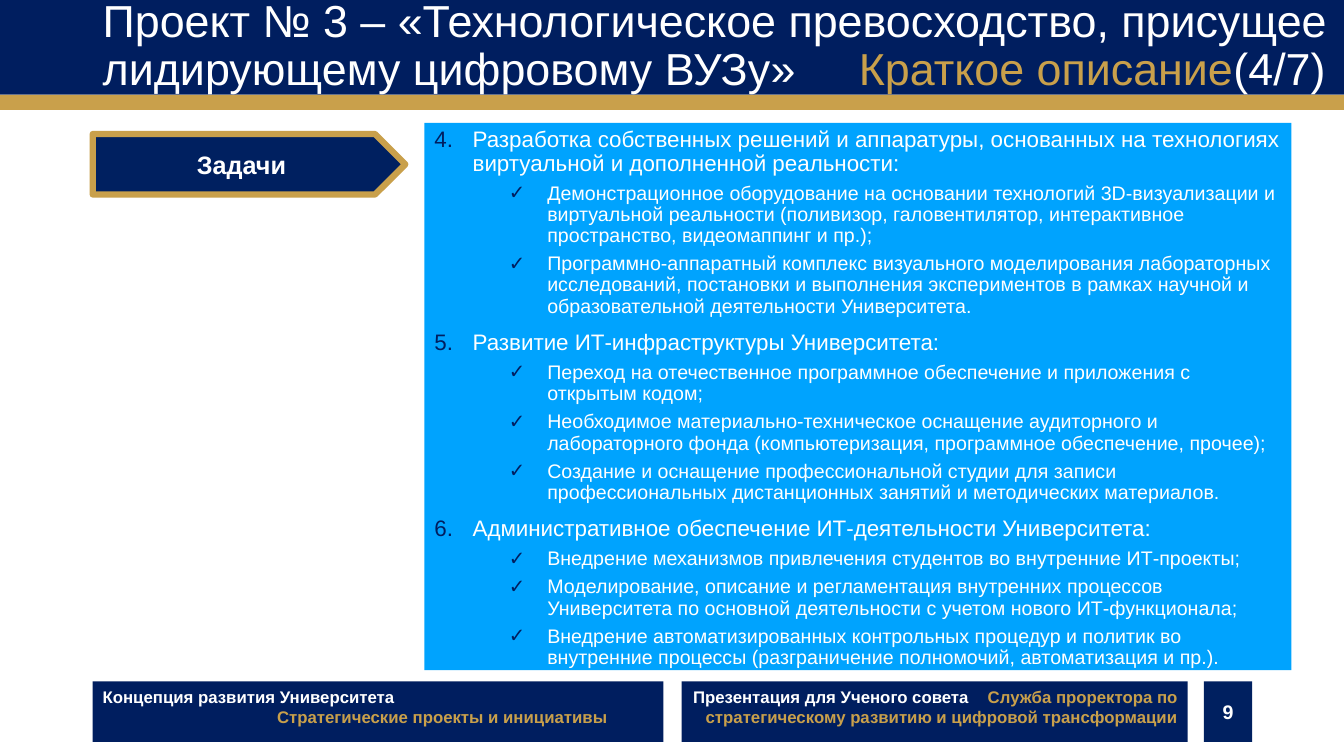
from lxml.etree import SubElement
from pptx import Presentation
from pptx.dml.color import RGBColor
from pptx.enum.shapes import MSO_SHAPE as Shape
from pptx.enum.text import MSO_ANCHOR as Anchor, PP_ALIGN as Align
from pptx.oxml.ns import qn
from pptx.util import Inches, Pt

COLORS = {"navy": "001E5F", "label": "002060", "gold": "C9A04B",
          "sky": "00A3FE", "white": "FFFFFF"}
FONT = "Arial"
WIDTH, HEIGHT = 13.33, 7.5

TITLE = [
    ("Проект № 3 – «Технологическое превосходство, присущее "
     "лидирующему цифровому ВУЗу»\t", "white"),
    ("Краткое описание", "gold"),
    ("(4/7)", "white"),
]
LABEL = "Задачи"
PAGE_NUMBER = "9"
CONCEPT = [("Концепция развития Университета", "white", 0),
           ("Стратегические проекты и инициативы", "gold", 1.73)]
AUDIENCE = "Презентация для Ученого совета"
DEPARTMENT = ("Служба проректора по стратегическому развитию "
              "и цифровой трансформации")
FIRST_TASK = 4
TASKS = [
    ("Разработка собственных решений и аппаратуры, основанных на технологиях "
     "виртуальной и дополненной реальности:", [
         "Демонстрационное оборудование на основании технологий "
         "3D-визуализации и виртуальной реальности (поливизор, "
         "галовентилятор, интерактивное пространство, видеомаппинг и пр.);",
         "Программно-аппаратный комплекс визуального моделирования "
         "лабораторных исследований, постановки и выполнения экспериментов "
         "в рамках научной и образовательной деятельности Университета.",
     ]),
    ("Развитие ИТ-инфраструктуры Университета:", [
        "Переход на отечественное программное обеспечение и приложения "
        "с открытым кодом;",
        "Необходимое материально-техническое оснащение аудиторного и "
        "лабораторного фонда (компьютеризация, программное обеспечение, "
        "прочее);",
        "Создание и оснащение профессиональной студии для записи "
        "профессиональных дистанционных занятий и методических материалов.",
    ]),
    ("Административное обеспечение ИТ-деятельности Университета:", [
        "Внедрение механизмов привлечения студентов во внутренние "
        "ИТ-проекты;",
        "Моделирование, описание и регламентация внутренних процессов "
        "Университета по основной деятельности с учетом нового "
        "ИТ-функционала;",
        "Внедрение автоматизированных контрольных процедур и политик во "
        "внутренние процессы (разграничение полномочий, автоматизация и пр.).",
    ]),
]

# Layout: one left margin, a header with a gold strip, a footer row
MARGIN = 0.92
HEADER, STRIP = 0.94, 0.15
FOOTER_TOP, FOOTER_HEIGHT = 6.76, 0.6
PANEL = (4.21, 1.22, 8.6, 5.43)
HANGING = 0.38


def rgb(name):
    return RGBColor.from_string(COLORS[name])


def add_block(page, place, fill, kind=Shape.RECTANGLE, anchor=Anchor.TOP):
    block = page.shapes.add_shape(kind, *map(Inches, place))
    block.shadow.inherit = False
    block.fill.solid()
    block.fill.fore_color.rgb = rgb(fill)
    block.line.fill.background()
    block.text_frame.word_wrap = True
    block.text_frame.vertical_anchor = anchor
    block.text_frame.paragraphs[0].alignment = Align.LEFT
    return block


def add_span(para, text, size, color="white", bold=False):
    span = para.add_run()
    span.text = text
    span.font.name, span.font.size, span.font.bold = FONT, Pt(size), bold
    span.font.color.rgb = rgb(color)
    return span


def next_para(frame):
    """Return the empty first paragraph, or a new one after the last."""
    first = frame.paragraphs[0]
    para = frame.add_paragraph() if first.runs else first
    para.alignment = Align.LEFT
    return para


def set_indent(para, left, first=0):
    props = para._p.get_or_add_pPr()
    props.set("marL", str(Inches(left)))
    props.set("indent", str(Inches(first)))
    return props


def add_item(frame, text, level, size, before, left, bullet, **attributes):
    para = next_para(frame)
    para.level = level
    para.line_spacing = 0.9
    para.space_before = Pt(before)
    props = set_indent(para, left, -HANGING)
    bullet_color = SubElement(props, qn("a:buClr"))
    SubElement(bullet_color, qn("a:srgbClr"), val=COLORS["navy"])
    SubElement(props, qn("a:buFont"), typeface=FONT)
    SubElement(props, qn(bullet), **attributes)
    add_span(para, text, size)


def add_header(page):
    add_block(page, (0, 0, WIDTH, HEADER), "navy")
    add_block(page, (0, HEADER, WIDTH, STRIP), "gold")
    box = page.shapes.add_textbox(
        *map(Inches, (MARGIN, 0, WIDTH - MARGIN, HEADER - 0.01)))
    box.text_frame.word_wrap = True
    box.text_frame.vertical_anchor = Anchor.MIDDLE
    para = box.text_frame.paragraphs[0]
    para.line_spacing = 0.9
    tabs = SubElement(para._p.get_or_add_pPr(), qn("a:tabLst"))
    SubElement(tabs, qn("a:tab"), pos=str(Inches(7.5)), algn="l")
    for text, color in TITLE:
        add_span(para, text, 32, color)


def add_centred(page, place, text, size, kind=Shape.RECTANGLE):
    block = add_block(page, place, "label", kind, Anchor.MIDDLE)
    para = block.text_frame.paragraphs[0]
    para.alignment = Align.CENTER
    add_span(para, text, size, bold=True)
    return block


def add_tasks(page):
    frame = add_block(page, PANEL, "sky").text_frame
    for task, steps in TASKS:
        add_item(frame, task, 0, 16, 10, HANGING, "a:buAutoNum",
                 type="arabicPeriod", startAt=str(FIRST_TASK))
        for step in steps:
            add_item(frame, step, 1, 14, 5, 1.12, "a:buChar", char="✓")


def add_footer(page):
    def place(left, width):
        return left, FOOTER_TOP, width, FOOTER_HEIGHT

    concept = add_block(page, place(MARGIN, 5.66), "navy").text_frame
    for text, color, left in CONCEPT:
        para = next_para(concept)
        set_indent(para, left)
        add_span(para, text, 12, color, True)

    audience = add_block(page, place(6.76, 5.02), "navy").text_frame
    para = audience.paragraphs[0]
    para.alignment = Align.RIGHT
    add_span(para, AUDIENCE, 12, bold=True)
    gap = add_span(para, " ", 12, bold=True)
    gap.font._element.set("spc", "1000")
    add_span(para, DEPARTMENT, 12, "gold", True)

    add_centred(page, place(11.94, 0.48), PAGE_NUMBER, 14)


def main():
    deck = Presentation()
    deck.slide_width, deck.slide_height = Inches(WIDTH), Inches(HEIGHT)
    page = deck.slides.add_slide(deck.slide_layouts[6])
    add_header(page)
    label = add_centred(page, (MARGIN, 1.33, 3.1, 0.6), LABEL, 18,
                        Shape.PENTAGON)
    label.line.color.rgb = rgb("gold")
    label.line.width = Pt(4.5)
    add_footer(page)
    add_tasks(page)
    deck.save("out.pptx")


if __name__ == "__main__":
    main()
